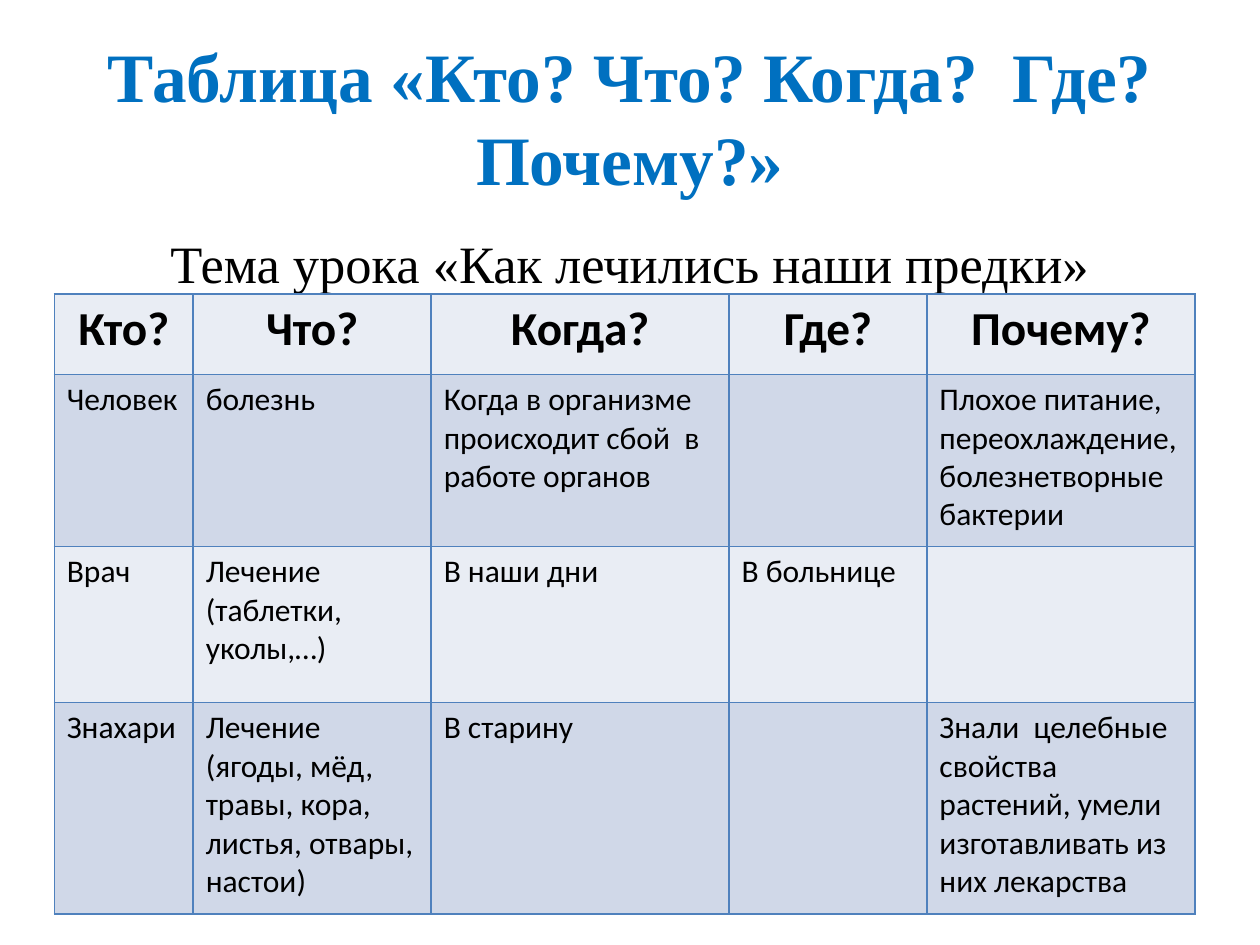
from lxml import etree
from pptx import Presentation
from pptx.dml.color import RGBColor
from pptx.enum import text
from pptx.oxml import ns
from pptx.util import Pt

BLUE = RGBColor(0x00, 0x70, 0xC0)
BLACK = RGBColor(0, 0, 0)
LIGHT = RGBColor(0xE9, 0xED, 0xF4)
DARK = RGBColor(0xD0, 0xD8, 0xE8)
BORDER = RGBColor(0x4F, 0x81, 0xBD)

SERIF = "Times New Roman"
SANS = "Calibri"

COLUMN_WIDTHS = [79.4, 136, 170.2, 113.1, 153.1]
ROW_HEIGHTS = [45.9, 98.3, 89.2, 121]
ROWS = [
    ["Кто?", "Что?", "Когда?", "Где?", "Почему?"],
    ["Человек", "болезнь",
     "Когда в организме происходит сбой  в работе органов", "",
     "Плохое питание, переохлаждение, болезнетворные бактерии"],
    ["Врач", "Лечение (таблетки, уколы,…)", "В наши дни", "В больнице", ""],
    ["Знахари", "Лечение (ягоды, мёд, травы, кора, листья, отвары, настои)",
     "В старину", "",
     "Знали  целебные свойства растений, умели изготавливать из них лекарства"],
]


def write(tf, content, size, font=SANS, color=BLACK, bold=False,
          align=text.PP_ALIGN.LEFT):
    p = tf.paragraphs[0]
    p.alignment = align
    p.font.size = Pt(size)
    if not content:
        return
    r = p.add_run()
    r.text = content
    r.font.name = font
    r.font.size = Pt(size)
    r.font.bold = bold
    r.font.color.rgb = color


def add_text(slide, box, content, anchor=text.MSO_ANCHOR.TOP, **style):
    tf = slide.shapes.add_textbox(*map(Pt, box)).text_frame
    tf.word_wrap = True
    tf.vertical_anchor = anchor
    write(tf, content, font=SERIF, align=text.PP_ALIGN.CENTER, **style)
    return tf


def set_borders(cell, color, width):
    """Draw the four cell sides; they must precede the fill in tcPr."""
    tc_pr = cell._tc.get_or_add_tcPr()
    for i, side in enumerate(("a:lnL", "a:lnR", "a:lnT", "a:lnB")):
        ln = etree.Element(ns.qn(side), w=str(Pt(width)))
        fill = etree.SubElement(ln, ns.qn("a:solidFill"))
        etree.SubElement(fill, ns.qn("a:srgbClr"), val=str(color))
        tc_pr.insert(i, ln)


def add_grid(slide, left, top):
    frame = slide.shapes.add_table(
        len(ROWS), len(COLUMN_WIDTHS), Pt(left), Pt(top),
        Pt(sum(COLUMN_WIDTHS)), Pt(sum(ROW_HEIGHTS)))
    table = frame.table
    table.first_row = table.horz_banding = False
    for column, width in zip(table.columns, COLUMN_WIDTHS):
        column.width = Pt(width)
    header = dict(size=27, bold=True, align=text.PP_ALIGN.CENTER)
    body = dict(size=18)
    for i, (row, height) in enumerate(zip(ROWS, ROW_HEIGHTS)):
        table.rows[i].height = Pt(height)
        for j, content in enumerate(row):
            cell = table.cell(i, j)
            cell.fill.solid()
            cell.fill.fore_color.rgb = DARK if i % 2 else LIGHT
            set_borders(cell, BORDER, 1)
            write(cell.text_frame, content, **(body if i else header))


def main():
    prs = Presentation()
    prs.slide_width, prs.slide_height = Pt(720), Pt(540)
    slide = prs.slides.add_slide(prs.slide_layouts[6])
    add_text(slide, (36, 21.6, 648, 90),
             "Таблица «Кто? Что? Когда?  Где? Почему?»",
             anchor=text.MSO_ANCHOR.MIDDLE, size=39.6, color=BLUE, bold=True)
    subtitle = add_text(slide, (36, 126, 648, 356.4),
                        "Тема урока «Как лечились наши предки»", size=30)
    subtitle.margin_top = Pt(6)
    add_grid(slide, 31, 168)
    prs.save("out.pptx")


if __name__ == "__main__":
    main()
